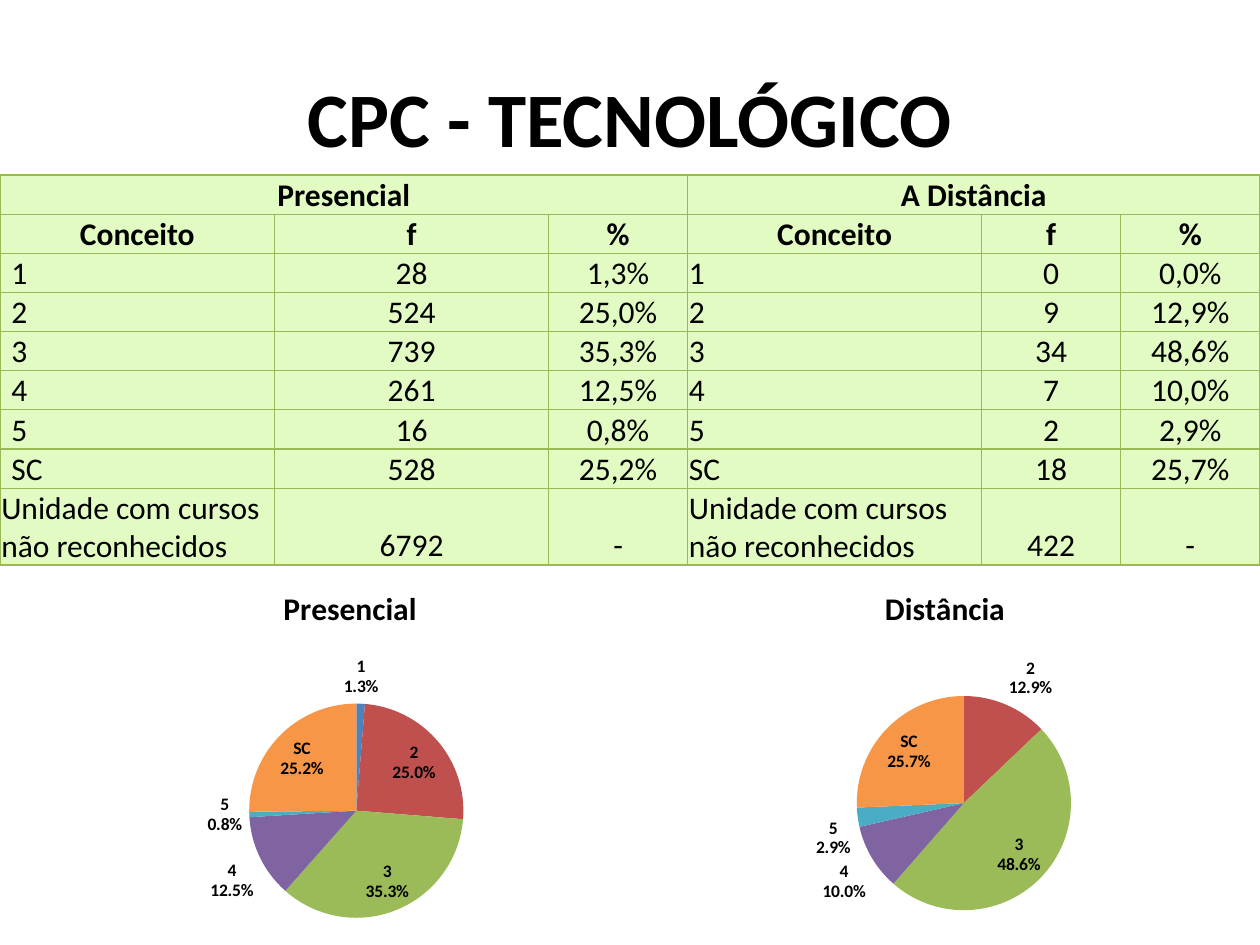
from dataclasses import dataclass

from lxml.etree import SubElement
from pptx import Presentation
from pptx.chart.data import CategoryChartData
from pptx.dml.color import RGBColor
from pptx.enum.chart import XL_CHART_TYPE, XL_LABEL_POSITION
from pptx.enum.text import MSO_ANCHOR, PP_ALIGN
from pptx.oxml import parse_xml
from pptx.oxml.ns import nsdecls, qn
from pptx.util import Pt


@dataclass(frozen=True)
class Theme:
    font: str = "Calibri"
    text: str = "000000"
    cell: str = "E2FBC2"
    border: str = "98B955"
    slices: tuple = ("4F81BD", "C0504D", "9BBB59", "8064A2", "4BACC6", "F79646")
    title_size: int = 44
    body_size: int = 18
    label_size: int = 10


THEME = Theme()
GRADES = ("1", "2", "3", "4", "5", "SC")
UNRECOGNIZED = "Unidade com cursos não reconhecidos"
COLUMN_WIDTHS = (157, 156.5, 79.5, 168, 79.5, 79.5)
ROW_HEIGHTS = (20,) * 8 + (33,)
HEADINGS = ("Conceito", "f", "%")
ON_SITE = (("28", "1,3%"), ("524", "25,0%"), ("739", "35,3%"), ("261", "12,5%"),
           ("16", "0,8%"), ("528", "25,2%"), ("6792", "-"))
DISTANCE = (("0", "0,0%"), ("9", "12,9%"), ("34", "48,6%"), ("7", "10,0%"),
            ("2", "2,9%"), ("18", "25,7%"), ("422", "-"))


def style_font(font, size, bold):
    font.name = THEME.font
    font.size = Pt(size)
    font.bold = bold
    font.color.rgb = RGBColor.from_string(THEME.text)


def add_text(frame, text, size, bold, align=PP_ALIGN.CENTER):
    para = frame.paragraphs[0]
    para.alignment = align
    span = para.add_run()
    span.text = text
    style_font(span.font, size, bold)


def add_title(page, text):
    box = page.shapes.add_textbox(Pt(36), Pt(21.6), Pt(648), Pt(90))
    frame = box.text_frame
    frame.word_wrap = True
    frame.vertical_anchor = MSO_ANCHOR.MIDDLE
    add_text(frame, text, THEME.title_size, True)


def style_cell(cell, left_margin):
    cell.vertical_anchor = MSO_ANCHOR.BOTTOM
    cell.margin_left = Pt(left_margin)
    cell.margin_top = cell.margin_right = Pt(0.75)
    cell.margin_bottom = Pt(0)
    properties = cell._tc.get_or_add_tcPr()
    for side in ("lnL", "lnR", "lnT", "lnB"):
        line = SubElement(properties, qn(f"a:{side}"), w=str(Pt(0.75)))
        fill = SubElement(line, qn("a:solidFill"))
        SubElement(fill, qn("a:srgbClr"), val=THEME.border)
    cell.fill.solid()
    cell.fill.fore_color.rgb = RGBColor.from_string(THEME.cell)


def add_grade_table(page):
    labels = GRADES + (UNRECOGNIZED,)
    rows = [("Presencial", "", "", "A Distância", "", ""), HEADINGS * 2]
    rows += [(label, *here, label, *away)
             for label, here, away in zip(labels, ON_SITE, DISTANCE)]
    table = page.shapes.add_table(len(rows), len(COLUMN_WIDTHS), Pt(0), Pt(100),
                                  Pt(720), Pt(sum(ROW_HEIGHTS))).table
    for column, width in zip(table.columns, COLUMN_WIDTHS):
        column.width = Pt(width)
    for row, height in zip(table.rows, ROW_HEIGHTS):
        row.height = Pt(height)
    for first in (0, 3):
        table.cell(0, first).merge(table.cell(0, first + 2))
    for row_index, values in enumerate(rows):
        header = row_index < 2
        for column_index, text in enumerate(values):
            cell = table.cell(row_index, column_index)
            indented = column_index == 0 and text in GRADES
            style_cell(cell, 6.5 if indented else 0.75)
            if text:
                left = not header and column_index % 3 == 0
                align = PP_ALIGN.LEFT if left else PP_ALIGN.CENTER
                add_text(cell.text_frame, text, THEME.body_size, header, align)


def place_plot(chart, x, y, width, height):
    area = chart._chartSpace.chart.plotArea
    for old in area.findall(qn("c:layout")):
        area.remove(old)
    layout = parse_xml(
        f'<c:layout {nsdecls("c")}><c:manualLayout><c:layoutTarget val="inner"/>'
        '<c:xMode val="edge"/><c:yMode val="edge"/>'
        f'<c:x val="{x}"/><c:y val="{y}"/><c:w val="{width}"/><c:h val="{height}"/>'
        '</c:manualLayout></c:layout>')
    area.insert(0, layout)


def add_labels(series, values):
    labels = series.data_labels
    labels.show_value = False
    labels.show_category_name = True
    labels.show_percentage = True
    labels.number_format = "0.0%"
    labels.number_format_is_linked = False
    labels.position = XL_LABEL_POSITION.BEST_FIT
    style_font(labels.font, THEME.label_size, True)
    element = labels._element
    separator = parse_xml(f'<c:separator {nsdecls("c")}>\n</c:separator>')
    element.find(qn("c:showBubbleSize")).addnext(separator)
    empty = [index for index, value in enumerate(values) if not value]
    for position, index in enumerate(empty):
        hidden = parse_xml(f'<c:dLbl {nsdecls("c")}><c:idx val="{index}"/>'
                           '<c:delete val="1"/></c:dLbl>')
        element.insert(position, hidden)


def add_pie(page, left, title, values, plot_x, plot_y):
    data = CategoryChartData()
    data.categories = GRADES
    data.add_series("Series 1", values)
    chart = page.shapes.add_chart(XL_CHART_TYPE.PIE, Pt(left), Pt(324),
                                  Pt(360), Pt(216), data).chart
    style_font(chart.font, THEME.label_size, False)
    chart.has_legend = False
    chart.has_title = True
    add_text(chart.chart_title.text_frame, title, THEME.body_size, True)
    place_plot(chart, plot_x, plot_y, 0.34, 0.57)
    plot = chart.plots[0]
    plot.vary_by_categories = True
    series = plot.series[0]
    for index, color in enumerate(THEME.slices):
        fill = series.points[index].format.fill
        fill.solid()
        fill.fore_color.rgb = RGBColor.from_string(color)
    add_labels(series, values)


def main():
    deck = Presentation()
    deck.slide_width, deck.slide_height = Pt(720), Pt(540)
    page = deck.slides.add_slide(deck.slide_layouts[6])
    add_title(page, "CPC - TECNOLÓGICO")
    add_grade_table(page)
    add_pie(page, 20, "Presencial", (1.3, 25, 35.3, 12.5, 0.8, 25.2), 0.34, 0.36)
    add_pie(page, 360, "Distância", (0, 12.9, 48.6, 10, 2.9, 25.7), 0.36, 0.34)
    deck.save("out.pptx")


if __name__ == "__main__":
    main()
